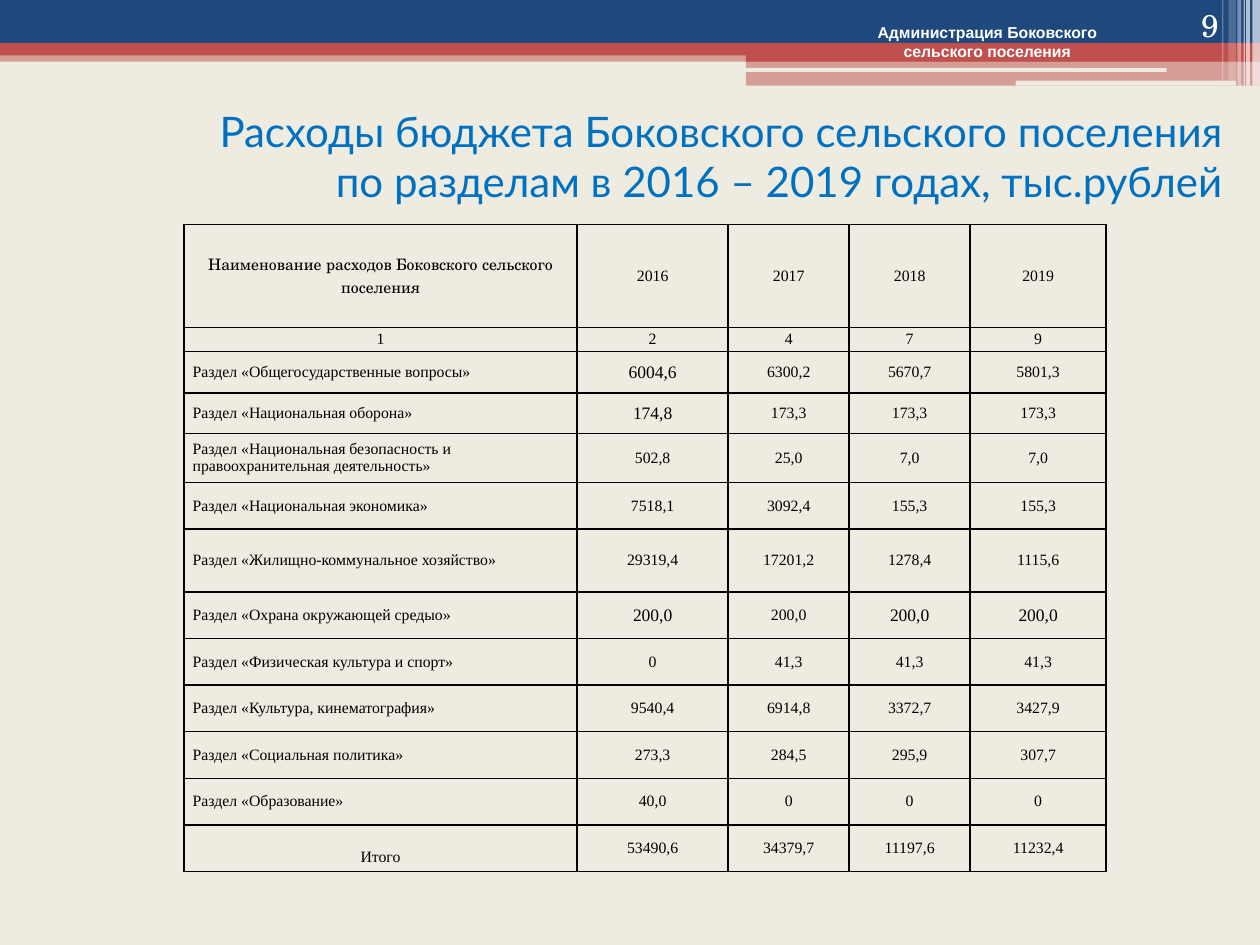
import pptx
import pptx.dml.color
import pptx.enum.shapes
import pptx.enum.text
import pptx.oxml.ns
import pptx.util
from lxml import etree

Inches = pptx.util.Inches
Align = pptx.enum.text.PP_ALIGN
Anchor = pptx.enum.text.MSO_ANCHOR
Shape = pptx.enum.shapes.MSO_SHAPE
qn = pptx.oxml.ns.qn

NAVY, RED, CREAM, WHITE, BLACK, BLUE = "1F497D", "C0504D", "EEECE1", "FFFFFF", "000000", "0070C0"

BANDS = [
    (0, 0.4, 10, 0.09, RED, 50),
    (0, 0, 10, 0.34, NAVY, 100),
    (0, 0.34, 10, 0.1, RED, 100),
    (5.92, 0.39, 4.08, 0.1, RED, 100),
    (5.92, 0.48, 4.08, 0.2, RED, 50),
]
RULES = [(5.91, 0.54, 3.35, 0.03), (8.06, 0.64, 1.75, 0.04)]
STRIPES = [
    (9.94, 0.06, 0.68, 65),
    (9.89, 0.03, 0.68, 65),
    (9.87, 0.01, 0.68, 60),
    (9.82, 0.03, 0.68, 40),
    (9.75, 0.06, 0.64, 20),
    (9.7, 0.01, 0.64, 30),
]

COLUMNS = [3.12, 1.2, 0.96, 0.96, 1.08]
EXPENSES = [
    (0.82, "Наименование расходов Боковского сельского поселения", "2016", "2017", "2018", "2019"),
    (0.19, "1", "2", "4", "7", "9"),
    (0.33, "Раздел «Общегосударственные вопросы»", "6004,6", "6300,2", "5670,7", "5801,3"),
    (0.32, "Раздел «Национальная оборона»", "174,8", "173,3", "173,3", "173,3"),
    (0.39, "Раздел «Национальная безопасность и правоохранительная деятельность»",
     "502,8", "25,0", "7,0", "7,0"),
    (0.37, "Раздел «Национальная экономика»", "7518,1", "3092,4", "155,3", "155,3"),
    (0.5, "Раздел «Жилищно-коммунальное хозяйство»", "29319,4", "17201,2", "1278,4", "1115,6"),
    (0.37, "Раздел «Охрана окружающей средыо»", "200,0", "200,0", "200,0", "200,0"),
    (0.37, "Раздел «Физическая культура и спорт»", "0", "41,3", "41,3", "41,3"),
    (0.37, "Раздел «Культура, кинематография»", "9540,4", "6914,8", "3372,7", "3427,9"),
    (0.37, "Раздел «Социальная политика»", "273,3", "284,5", "295,9", "307,7"),
    (0.37, "Раздел «Образование»", "40,0", "0", "0", "0"),
    (0.37, "Итого", "53490,6", "34379,7", "11197,6", "11232,4"),
]
LARGE_CELLS = {(2, 1), (3, 1), (7, 1), (7, 3), (7, 4)}


def color(value):
    return pptx.dml.color.RGBColor.from_string(value)


def write(frame, text, font="Times New Roman", size=9, ink=BLACK, bold=False,
          align=Align.CENTER):
    frame.word_wrap = True
    frame.text = text
    for para in frame.paragraphs:
        para.alignment = align
        for span in para.runs:
            span.font.name = font
            span.font.size = pptx.util.Pt(size)
            span.font.bold = bold
            span.font.color.rgb = color(ink)


class BudgetSlide:
    """Hold the slide and draw each kind of element in its style."""

    def __init__(self, deck):
        self.page = deck.slides.add_slide(deck.slide_layouts[5])
        self.page.background.fill.solid()
        self.page.background.fill.fore_color.rgb = color(CREAM)

    def band(self, left, top, width, height, fill, opacity=100, kind=Shape.RECTANGLE):
        box = self.page.shapes.add_shape(
            kind, Inches(left), Inches(top), Inches(width), Inches(height))
        box.shadow.inherit = False
        box.line.fill.background()
        box.fill.solid()
        box.fill.fore_color.rgb = color(fill)
        if opacity < 100:
            tint = box.element.xpath(".//a:solidFill/a:srgbClr")[0]
            etree.SubElement(tint, qn("a:alpha"), val=str(opacity * 1000))

    def title(self, text):
        box = self.page.shapes.title
        box.left, box.top, box.width, box.height = map(Inches, (0, 0.84, 10, 0.79))
        frame = box.text_frame
        write(frame, text, font="Lato", size=24, ink=BLUE, align=Align.RIGHT)
        frame.auto_size = pptx.enum.text.MSO_AUTO_SIZE.NONE
        frame.vertical_anchor = Anchor.MIDDLE
        frame.margin_right = Inches(0.3)

    def label(self, left, top, width, height, text, anchor=Anchor.TOP, **style):
        box = self.page.shapes.add_textbox(
            Inches(left), Inches(top), Inches(width), Inches(height))
        write(box.text_frame, text, ink=WHITE, **style)
        box.text_frame.vertical_anchor = anchor

    def border(self, cell):
        properties = cell._tc.get_or_add_tcPr()
        for side in ("lnL", "lnR", "lnT", "lnB"):
            line = etree.SubElement(properties, qn("a:" + side), w="12700")
            fill = etree.SubElement(line, qn("a:solidFill"))
            etree.SubElement(fill, qn("a:srgbClr"), val=BLACK)

    def table(self, left, top, columns, rows, large):
        height = sum(row[0] for row in rows)
        grid = self.page.shapes.add_table(
            len(rows), len(columns), Inches(left), Inches(top),
            Inches(sum(columns)), Inches(height)).table
        grid.first_row = grid.horz_banding = False
        for column, width in zip(grid.columns, columns):
            column.width = Inches(width)
        for r, (row_height, *texts) in enumerate(rows):
            grid.rows[r].height = Inches(row_height)
            for c, text in enumerate(texts):
                cell = grid.cell(r, c)
                self.border(cell)
                cell.fill.background()
                cell.vertical_anchor = Anchor.MIDDLE
                cell.margin_left = cell.margin_right = Inches(0.07)
                cell.margin_top = cell.margin_bottom = 0
                section = c == 0 and text.startswith("Раздел")
                write(cell.text_frame, text,
                      font="TeX Gyre Schola" if r == c == 0 else "Times New Roman",
                      size=10 if (r, c) in large else 9,
                      align=Align.LEFT if section else Align.CENTER)
        grid.cell(len(rows) - 1, 0).margin_top = Inches(0.14)


def main():
    deck = pptx.Presentation()
    deck.slide_width, deck.slide_height = Inches(10), Inches(7.5)
    slide = BudgetSlide(deck)
    for band in BANDS:
        slide.band(*band)
    for rule in RULES:
        slide.band(*rule, CREAM, kind=Shape.ROUNDED_RECTANGLE)
    for left, width, height, opacity in STRIPES:
        slide.band(left, 0, width, height, WHITE, opacity)
    slide.title("Расходы бюджета Боковского сельского поселения\v"
                "по разделам в 2016 – 2019 годах, тыс.рублей")
    slide.label(6.28, 0.13, 3.11, 0.4, "Администрация Боковского\nсельского поселения",
                font="Arial", bold=True)
    slide.label(8.94, 0, 0.83, 0.4, "9", anchor=Anchor.BOTTOM,
                font="TeX Gyre Schola", size=18, align=Align.RIGHT)
    slide.table(1.46, 1.78, COLUMNS, EXPENSES, LARGE_CELLS)
    deck.save("out.pptx")


if __name__ == "__main__":
    main()
